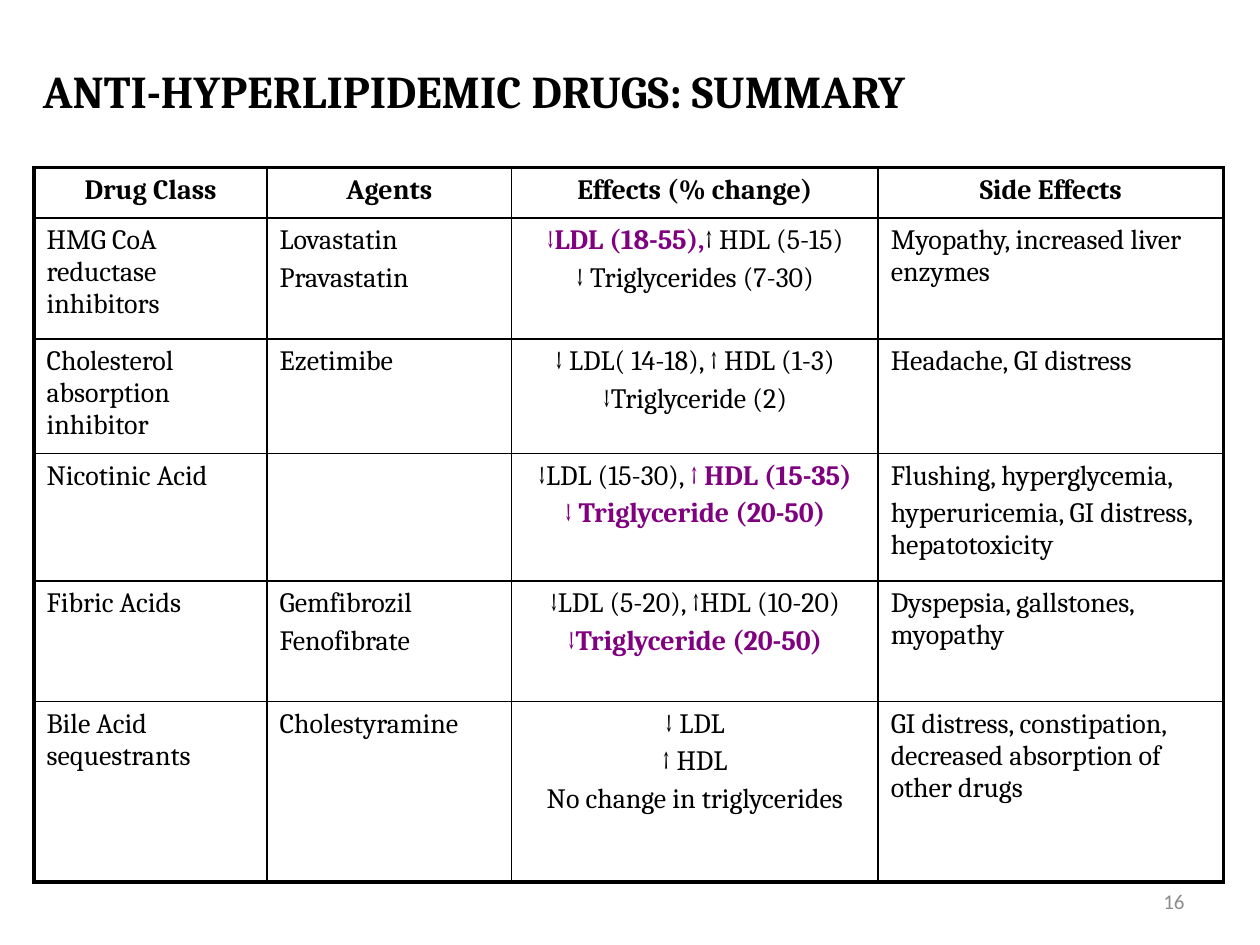
from dataclasses import dataclass

from lxml.etree import SubElement
from pptx import Presentation
from pptx.dml.color import RGBColor
from pptx.enum.text import MSO_ANCHOR, PP_ALIGN
from pptx.oxml.ns import qn
from pptx.util import Emu, Pt

EMU_PER_PX = 9144


@dataclass(frozen=True)
class Theme:
    """Colours, fonts and type sizes of the slide."""
    ink: str = "000000"
    emphasis: str = "800080"
    muted: str = "8C8C8C"
    serif: str = "Cambria"
    sans: str = "Calibri"
    title_size: int = 26
    table_size: int = 16
    number_size: int = 12
    paragraph_gap: float = 3.2
    frame_line: float = 2.25
    grid_line: float = 1


THEME = Theme()
COLUMN_WIDTHS = (185, 194, 291, 274)
ROW_HEIGHTS = (40, 96, 91, 101, 96, 143)
EFFECTS_COLUMN = 2
ROWS = (
    ("Drug Class", "Agents", "Effects (% change)", "Side Effects"),
    ("HMG CoA reductase inhibitors", "Lovastatin\nPravastatin",
     "*↓LDL (18-55),*↑ HDL (5-15)\n↓ Triglycerides (7-30)",
     "Myopathy, increased liver enzymes"),
    ("Cholesterol absorption inhibitor", "Ezetimibe",
     "↓ LDL( 14-18), ↑ HDL (1-3)\n↓Triglyceride (2)",
     "Headache, GI distress"),
    ("Nicotinic Acid", "",
     "↓LDL (15-30), *↑ HDL (15-35)*\n*↓ Triglyceride (20-50)*",
     "Flushing, hyperglycemia,\nhyperuricemia, GI distress, hepatotoxicity"),
    ("Fibric Acids", "Gemfibrozil\nFenofibrate",
     "↓LDL (5-20), ↑HDL (10-20)\n*↓Triglyceride (20-50)*",
     "Dyspepsia, gallstones, myopathy"),
    ("Bile Acid sequestrants", "Cholestyramine",
     "↓ LDL\n↑ HDL\nNo change in triglycerides",
     "GI distress, constipation, decreased absorption of other drugs"),
)


def px(length):
    """Turn px into EMU."""
    return Emu(length * EMU_PER_PX)


def style_font(font, name, size, color, bold=False):
    """Set the face, size, colour and weight of a font."""
    font.name, font.size, font.bold = name, Pt(size), bold
    font.color.rgb = RGBColor.from_string(color)


def add_title(slide, left, top, width, height):
    """Place the title placeholder in its box."""
    title = slide.shapes.title
    title.left, title.top, title.width, title.height = map(px, (left, top, width, height))
    frame = title.text_frame
    frame.text = "ANTI-HYPERLIPIDEMIC DRUGS: SUMMARY"
    frame.vertical_anchor = MSO_ANCHOR.MIDDLE
    paragraph = frame.paragraphs[0]
    paragraph.alignment = PP_ALIGN.LEFT
    style_font(paragraph.font, THEME.serif, THEME.title_size, THEME.ink, True)


def set_borders(cell, at_edge):
    """Draw thick lines on the table's edges and thin ones inside."""
    properties = cell._tc.get_or_add_tcPr()
    for index, (side, thick) in enumerate(at_edge.items()):
        points = THEME.frame_line if thick else THEME.grid_line
        line = properties.makeelement(qn(f"a:{side}"), {"w": str(Pt(points))})
        fill = SubElement(line, qn("a:solidFill"))
        SubElement(fill, qn("a:srgbClr"), val=THEME.ink)
        properties.insert(index, line)


def fill_cell(cell, text, centered, bold):
    """Write a cell's paragraphs, with emphasis between asterisks."""
    cell.fill.background()
    frame = cell.text_frame
    for index, line in enumerate(text.split("\n")):
        paragraph = frame.add_paragraph() if index else frame.paragraphs[0]
        paragraph.alignment = PP_ALIGN.CENTER if centered else PP_ALIGN.LEFT
        paragraph.space_before = Pt(THEME.paragraph_gap)
        style_font(paragraph.font, THEME.serif, THEME.table_size, THEME.ink, bold)
        for part, words in enumerate(line.split("*")):
            if words:
                run = paragraph.add_run()
                run.text = words
                if part % 2:
                    run.font.bold = True
                    run.font.color.rgb = RGBColor.from_string(THEME.emphasis)


def add_drug_table(slide, left, top):
    """Place the table of drug classes with its corner at the given point."""
    row_count, column_count = len(ROW_HEIGHTS), len(COLUMN_WIDTHS)
    table = slide.shapes.add_table(
        row_count, column_count, px(left), px(top),
        px(sum(COLUMN_WIDTHS)), px(sum(ROW_HEIGHTS))).table
    table.first_row = table.horz_banding = False
    for column, width in zip(table.columns, COLUMN_WIDTHS):
        column.width = px(width)
    for row_index, (row, height, texts) in enumerate(zip(table.rows, ROW_HEIGHTS, ROWS)):
        row.height = px(height)
        is_header = row_index == 0
        for column_index, (cell, text) in enumerate(zip(row.cells, texts)):
            fill_cell(cell, text, is_header or column_index == EFFECTS_COLUMN, is_header)
            set_borders(cell, {
                "lnL": column_index == 0,
                "lnR": column_index == column_count - 1,
                "lnT": is_header,
                "lnB": row_index == row_count - 1,
            })


def add_slide_number(slide, left, top, width, height):
    """Place the slide number at the right of its box."""
    frame = slide.shapes.add_textbox(*map(px, (left, top, width, height))).text_frame
    frame.word_wrap = True
    frame.vertical_anchor = MSO_ANCHOR.MIDDLE
    frame.text = "16"
    paragraph = frame.paragraphs[0]
    paragraph.alignment = PP_ALIGN.RIGHT
    style_font(paragraph.font, THEME.sans, THEME.number_size, THEME.muted)


def main():
    """Build and save the slide."""
    presentation = Presentation()
    presentation.slide_width, presentation.slide_height = px(1000), px(750)
    slide = presentation.slides.add_slide(presentation.slide_layouts.get_by_name("Title Only"))
    add_title(slide, 24, 34, 949, 75)
    add_drug_table(slide, 27, 133)
    add_slide_number(slide, 717, 695, 233, 40)
    presentation.save("out.pptx")


if __name__ == "__main__":
    main()
